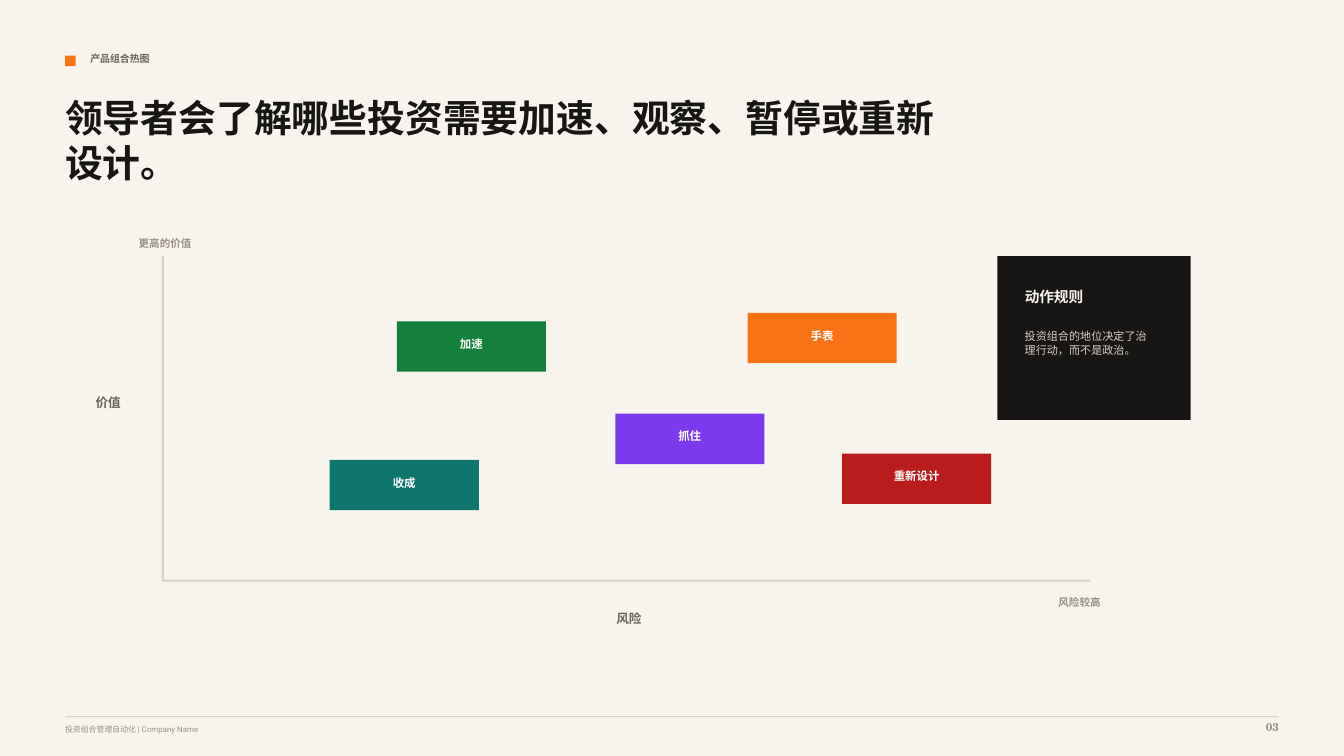
from dataclasses import dataclass

from pptx import Presentation
from pptx.dml.color import RGBColor
from pptx.enum.shapes import MSO_SHAPE
from pptx.enum.text import PP_ALIGN
from pptx.slide import Slide
from pptx.util import Pt

RECT = MSO_SHAPE.RECTANGLE
LEFT, CENTER, RIGHT = PP_ALIGN.LEFT, PP_ALIGN.CENTER, PP_ALIGN.RIGHT

CREAM = RGBColor(0xF7, 0xF4, 0xEE)
INK = RGBColor(0x17, 0x16, 0x14)
GRAY = RGBColor(0x69, 0x63, 0x5A)
MUTED = RGBColor(0x9A, 0x91, 0x84)
RULE = RGBColor(0xD9, 0xD0, 0xC3)
SAND = RGBColor(0xD8, 0xD0, 0xC4)
WHITE = RGBColor(0xFF, 0xFF, 0xFF)
ORANGE = RGBColor(0xF9, 0x73, 0x16)
GREEN = RGBColor(0x15, 0x80, 0x3D)
RED = RGBColor(0xB9, 0x1C, 0x1C)
TEAL = RGBColor(0x0F, 0x76, 0x6E)
VIOLET = RGBColor(0x7C, 0x3A, 0xED)

SANS, SERIF = "Roboto", "TeX Gyre Schola"

WIDE, HIGH = 960, 540
EDGE = 46.5
SPAN = WIDE - 2 * EDGE
AXIS_X, AXIS_TOP, AXIS_Y = 115.5, 183, 414
AXIS_LEN, STROKE = 663, 1.5
CARD_W, CARD_H = 106.5, 36
PAD_X, PAD_Y = 9, 11.25
PANEL_X, PANEL_PAD = 712.5, 19.5


@dataclass(frozen=True)
class Card:
    name: str
    left: float
    top: float
    color: RGBColor


@dataclass(frozen=True)
class Label:
    text: str
    left: float
    top: float
    width: float
    size: float
    color: RGBColor
    align: PP_ALIGN = LEFT


CARDS = [
    Card("加速", 283.5, 229.5, GREEN),
    Card("手表", 534, 223.5, ORANGE),
    Card("重新设计", 601.5, 324, RED),
    Card("收成", 235.5, 328.5, TEAL),
    Card("抓住", 439.5, 295.5, VIOLET),
]

LABELS = [
    Label("更高的价值", 99, 169.5, 90, 7.5, MUTED),
    Label("风险较高", 756, 426, 75, 7.5, MUTED),
    Label("价值", 55.5, 282, 43.5, 9, GRAY, CENTER),
    Label("风险", 427.5, 436.5, 43.5, 9, GRAY, CENTER),
]


def add_box(slide: Slide, left: float, top: float, width: float,
            height: float, color: RGBColor) -> None:
    box = slide.shapes.add_shape(RECT, Pt(left), Pt(top), Pt(width), Pt(height))
    box.shadow.inherit = False
    box.fill.solid()
    box.fill.fore_color.rgb = color
    box.line.fill.background()


def add_text(slide: Slide, text: str, left: float, top: float, width: float,
             height: float, *, size: float, color: RGBColor,
             face: str = SANS, bold: bool = True,
             align: PP_ALIGN = LEFT) -> None:
    box = slide.shapes.add_textbox(Pt(left), Pt(top), Pt(width), Pt(height))
    frame = box.text_frame
    frame.word_wrap = True
    frame.margin_left = frame.margin_right = Pt(0)
    frame.margin_top = frame.margin_bottom = Pt(0)
    para = frame.paragraphs[0]
    para.alignment = align
    run = para.add_run()
    run.text = text
    font = run.font
    font.name, font.size, font.bold = face, Pt(size), bold
    font.color.rgb = color


def add_head(slide: Slide) -> None:
    add_box(slide, EDGE, 39.75, 7.5, 7.5, ORANGE)
    add_text(slide, "产品组合热图", 64.5, 37.5, 420, 13.5, size=7.1, color=GRAY)
    add_text(slide, "领导者会了解哪些投资需要加速、观察、暂停或重新设计。",
             EDGE, 67.5, 645, 73.5, size=27, color=INK, face=SERIF)


def add_map(slide: Slide) -> None:
    add_box(slide, AXIS_X, AXIS_Y, AXIS_LEN, STROKE, RULE)
    add_box(slide, AXIS_X, AXIS_TOP, STROKE, AXIS_Y - AXIS_TOP, RULE)
    for card in CARDS:
        add_box(slide, card.left, card.top, CARD_W, CARD_H, card.color)
        add_text(slide, card.name, card.left + PAD_X, card.top + PAD_Y,
                 CARD_W - 2 * PAD_X, 12, size=8.2, color=WHITE, align=CENTER)
    for label in LABELS:
        add_text(slide, label.text, label.left, label.top, label.width, 13,
                 size=label.size, color=label.color, align=label.align)


def add_panel(slide: Slide) -> None:
    left = PANEL_X + PANEL_PAD
    add_box(slide, PANEL_X, AXIS_TOP, 138, 117, INK)
    add_text(slide, "动作规则", left, 205.5, 90, 13.5, size=10.5, color=CREAM)
    add_text(slide, "投资组合的地位决定了治理行动，而不是政治。",
             left, 235.5, 94.5, 40.5, size=7.9, color=SAND, bold=False)


def add_foot(slide: Slide) -> None:
    add_box(slide, EDGE, 511.5, SPAN, 0.75, RULE)
    add_text(slide, "投资组合管理自动化 | Company Name", EDGE, 517.5, 570, 10.5,
             size=5.6, color=MUTED, bold=False)
    add_text(slide, "03", WIDE - EDGE - 36, 514.5, 36, 13.5,
             size=8.2, color=MUTED, face=SERIF, align=RIGHT)


def main() -> None:
    deck = Presentation()
    deck.slide_width, deck.slide_height = Pt(WIDE), Pt(HIGH)
    slide = deck.slides.add_slide(deck.slide_layouts[6])
    add_box(slide, 0, 0, WIDE, HIGH, CREAM)
    add_head(slide)
    add_map(slide)
    add_panel(slide)
    add_foot(slide)
    deck.save("out.pptx")


if __name__ == "__main__":
    main()
